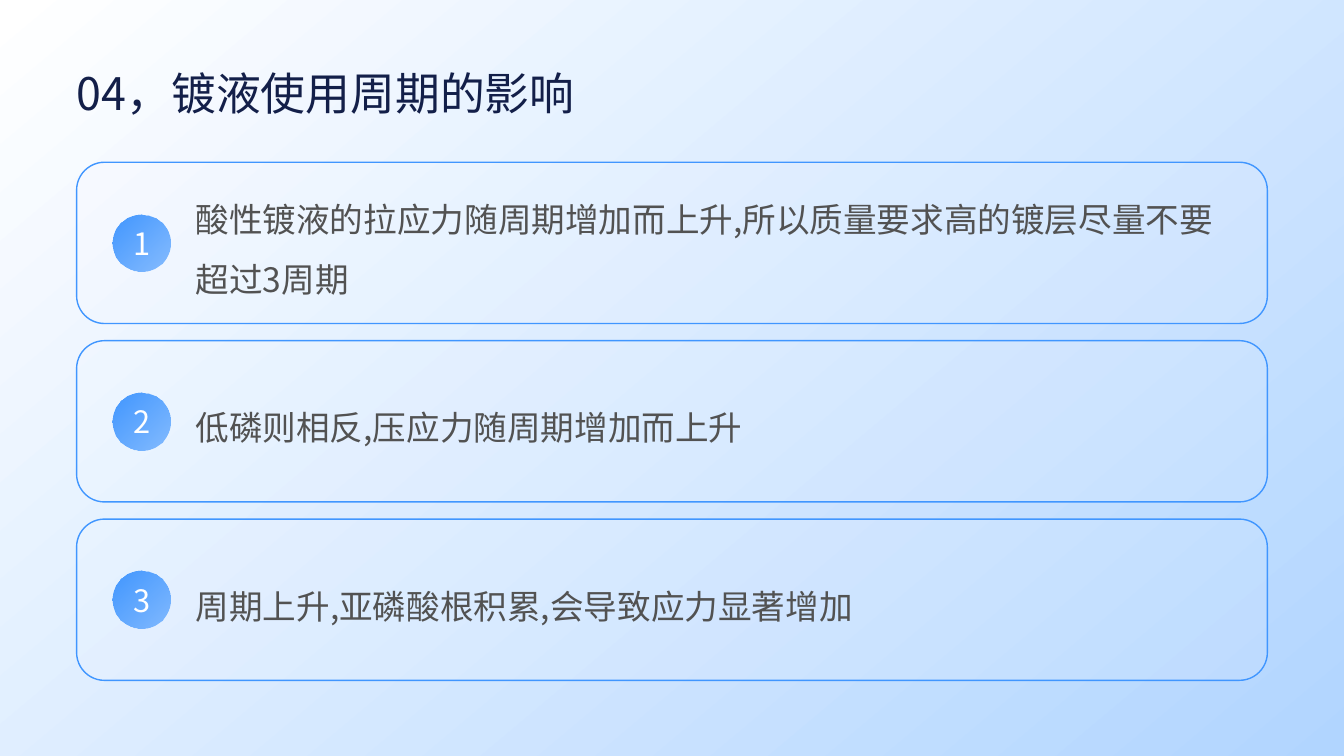
"""Build a slide listing three effects of plating bath age on stress."""
from lxml.etree import SubElement
from pptx import Presentation
from pptx.dml.color import RGBColor
from pptx.enum.lang import MSO_LANGUAGE_ID as Language
from pptx.enum.shapes import MSO_SHAPE as Shape
from pptx.enum.text import MSO_ANCHOR as Anchor, PP_ALIGN as Align
from pptx.oxml.ns import qn
from pptx.util import Inches, Pt

FONT = "Noto Sans CJK SC"
COLORS = {"white": "FFFFFF", "sky": "B1D5FF", "blue": "4096FF",
          "navy": "131F49", "gray": "525252"}


def write_text(shape, text, size, color, anchor=Anchor.MIDDLE, align=Align.LEFT,
               insets=(0, 0, 0, 0), spacing=1.0, wrap=True):
    frame = shape.text_frame
    frame.word_wrap = wrap
    frame.vertical_anchor = anchor
    (frame.margin_left, frame.margin_top,
     frame.margin_right, frame.margin_bottom) = map(Inches, insets)
    paragraph = frame.paragraphs[0]
    paragraph.alignment = align
    paragraph.line_spacing = spacing
    run = paragraph.add_run()
    run.text = text
    run.font.size = Pt(size)
    run.font.color.rgb = RGBColor.from_string(COLORS[color])
    run.font.language_id = Language.SIMPLIFIED_CHINESE
    run.font.name = FONT
    SubElement(run.font._element, qn("a:ea"), typeface=FONT)


def paint(shape, colors, angle=0, opacity=100):
    shape.shadow.inherit = False
    shape.line.fill.background()
    if len(colors) == 1:
        shape.fill.solid()
        shape.fill.fore_color.rgb = RGBColor.from_string(COLORS[colors[0]])
    else:
        shape.fill.gradient()
        shape.fill.gradient_angle = 360 - angle
        for stop, color in zip(shape.fill.gradient_stops, colors):
            stop.color.rgb = RGBColor.from_string(COLORS[color])
    if opacity < 100:
        last_color = list(shape.element.spPr.iter(qn("a:srgbClr")))[-1]
        SubElement(last_color, qn("a:alpha"), val=str(opacity * 1000))


presentation = Presentation()
presentation.slide_width = Inches(13.333)
presentation.slide_height = Inches(7.5)
slide = presentation.slides.add_slide(presentation.slide_layouts[6])
shapes = slide.shapes

backdrop = shapes.add_shape(Shape.RECTANGLE, 0, 0, presentation.slide_width,
                            presentation.slide_height)
paint(backdrop, ["white", "sky"], angle=50)

margin = Inches(0.76)
content_width = presentation.slide_width - 2 * margin
title = shapes.add_textbox(margin, Inches(0.39), content_width, Inches(0.79))
write_text(title, "04，镀液使用周期的影响", 32, "navy", anchor=Anchor.BOTTOM)

effects = [
    "酸性镀液的拉应力随周期增加而上升,所以质量要求高的镀层尽量不要超过3周期",
    "低磷则相反,压应力随周期增加而上升",
    "周期上升,亚磷酸根积累,会导致应力显著增加",
]
first_top, row_pitch, card_height = Inches(1.61), Inches(1.77), Inches(1.6)
badge_size = Inches(0.57)
badge_left = margin + Inches(0.36)

for row, effect in enumerate(effects):
    top = first_top + row * row_pitch
    card = shapes.add_shape(Shape.ROUNDED_RECTANGLE, margin, top,
                            content_width, card_height)
    card.adjustments[0] = 0.173
    paint(card, ["white"], opacity=10)
    card.line.color.rgb = RGBColor.from_string(COLORS["blue"])
    card.line.width = Pt(1)
    write_text(card, effect, 24, "gray", insets=(1.1, 0, 0.2, 0.08), spacing=1.5)

    badge_top = top + (card_height - badge_size) // 2
    badge = shapes.add_shape(Shape.OVAL, badge_left, badge_top, badge_size, badge_size)
    paint(badge, ["blue", "blue"], angle=45, opacity=59)
    write_text(badge, str(row + 1), 22, "white", align=Align.CENTER,
               insets=(0.1, 0.05, 0.1, 0.05), wrap=False)

presentation.save("out.pptx")
